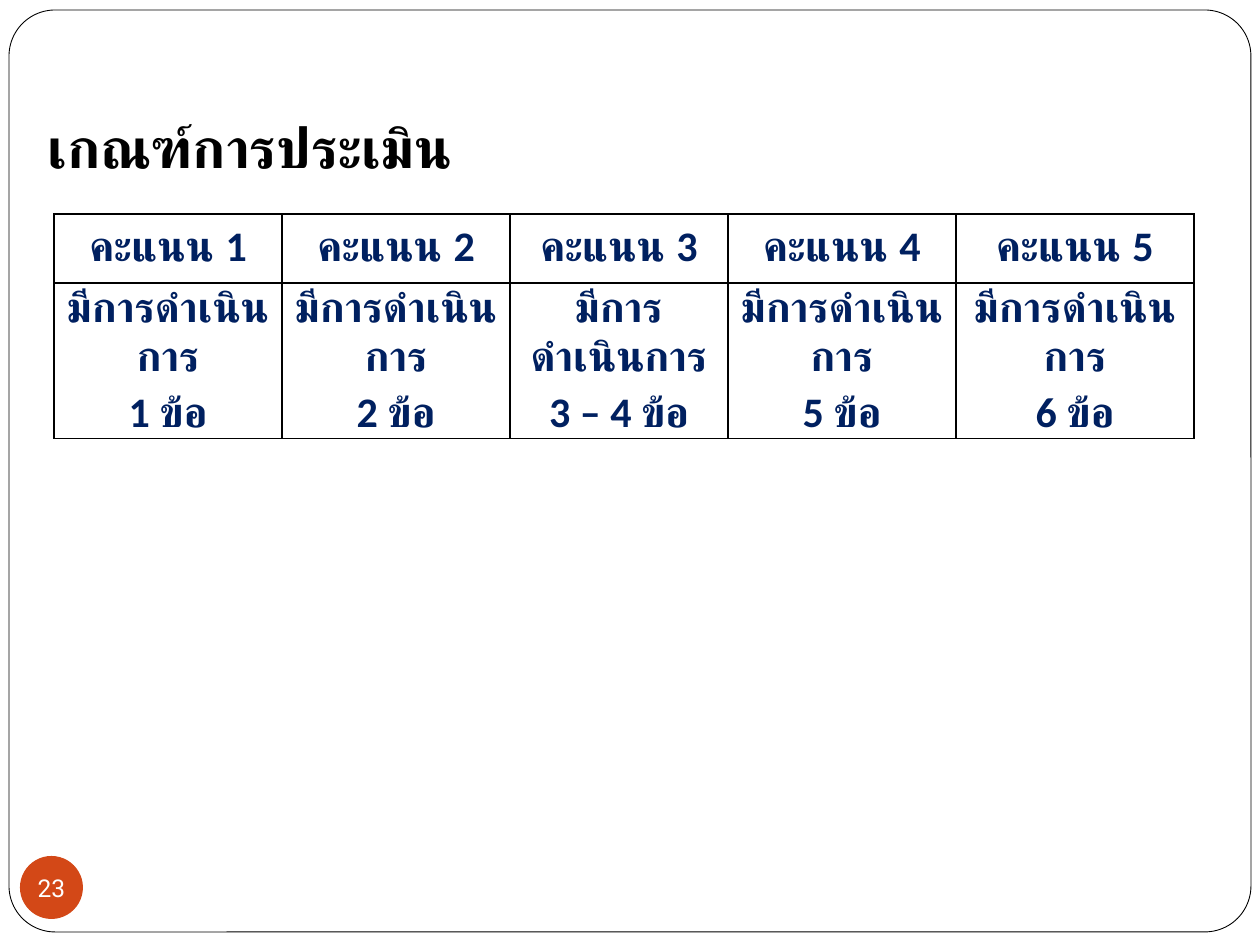
from pptx import Presentation
from pptx.dml.color import RGBColor
from pptx.enum.shapes import MSO_SHAPE
from pptx.enum.text import MSO_ANCHOR, MSO_AUTO_SIZE, PP_ALIGN
from pptx.oxml import parse_xml
from pptx.oxml.ns import nsdecls
from pptx.util import Pt

WIDE, HIGH = 1260, 945
SCALE = 9144000 / WIDE
NAVY, RUST, BLACK, WHITE = "002060", "D34817", "000000", "FFFFFF"
COLS = [228, 228, 218, 228, 238]
ROWS = [69, 139]
COUNTS = ["1", "2", "3 – 4", "5", "6"]


def px(num):
    """Turn whole px into EMU."""
    return round(num * SCALE)


def tint(code):
    """Turn a hex string into a colour."""
    return RGBColor.from_string(code)


def write(frame, text, size=24, color=NAVY, font="Calibri", bold=True,
          align=PP_ALIGN.CENTER, space=None):
    """Write the lines of text as formatted paragraphs."""
    frame.text = text
    for para in frame.paragraphs:
        para.alignment = align
        para.line_spacing = space
        for run in para.runs:
            run.font.size = Pt(size)
            run.font.name = font
            run.font.bold = bold
            run.font.color.rgb = tint(color)


def shape(slide, kind, box, fill):
    """Add a flat filled shape without a line."""
    item = slide.shapes.add_shape(kind, *map(px, box))
    item.shadow.inherit = False
    item.fill.solid()
    item.fill.fore_color.rgb = tint(fill)
    item.line.fill.background()
    return item


def panel(slide, box):
    """Draw the rounded frame of the slide."""
    item = shape(slide, MSO_SHAPE.ROUNDED_RECTANGLE, box, WHITE)
    item.adjustments[0] = 0.05
    item.line.color.rgb = tint(BLACK)
    item.line.width = Pt(0.5)
    slide.shapes._spTree.insert(2, item._element)


def badge(slide, box, text):
    """Draw the round page number."""
    frame = shape(slide, MSO_SHAPE.OVAL, box, RUST).text_frame
    frame.margin_left = frame.margin_right = 0
    frame.margin_top = frame.margin_bottom = 0
    frame.vertical_anchor = MSO_ANCHOR.MIDDLE
    frame.word_wrap = False
    write(frame, text, size=14, color=WHITE, font="Roboto", bold=False)


def title(slide, box, text):
    """Place and fill the title."""
    item = slide.shapes.title
    item.left, item.top, item.width, item.height = map(px, box)
    frame = item.text_frame
    frame.auto_size = MSO_AUTO_SIZE.NONE
    frame.vertical_anchor = MSO_ANCHOR.MIDDLE
    write(frame, text, size=32, color=BLACK, align=PP_ALIGN.LEFT)


def border(cell):
    """Put a thin line on each side of a cell."""
    props = cell._tc.get_or_add_tcPr()
    for spot, side in enumerate(("lnL", "lnR", "lnT", "lnB")):
        props.insert(spot, parse_xml(
            f'<a:{side} {nsdecls("a")} w="12700"><a:solidFill>'
            f'<a:srgbClr val="{BLACK}"/></a:solidFill></a:{side}>'))


def grid(slide, left, top):
    """Build the table of scores."""
    spans = map(px, (left, top, sum(COLS), sum(ROWS)))
    table = slide.shapes.add_table(len(ROWS), len(COLS), *spans).table
    table.first_row = table.horz_banding = False
    for row, high in zip(table.rows, ROWS):
        row.height = px(high)
    for col, (wide, count) in enumerate(zip(COLS, COUNTS)):
        table.columns[col].width = px(wide)
        texts = f"คะแนน {col + 1}", f"มีการดำเนินการ\n{count} ข้อ"
        for row, text in enumerate(texts):
            cell = table.cell(row, col)
            cell.margin_left = cell.margin_right = px(9)
            cell.margin_top = cell.margin_bottom = 0
            cell.fill.background()
            border(cell)
            write(cell.text_frame, text, space=1.15)


def main():
    """Build and save the slide."""
    deck = Presentation()
    deck.slide_width, deck.slide_height = px(WIDE), px(HIGH)
    slide = deck.slides.add_slide(deck.slide_layouts[5])
    panel(slide, (9, 10, 1242, 922))
    badge(slide, (20, 856, 63, 63), "23")
    title(slide, (35, 108, 1191, 76), "เกณฑ์การประเมิน")
    grid(slide, 54, 214)
    deck.save("out.pptx")


if __name__ == "__main__":
    main()
